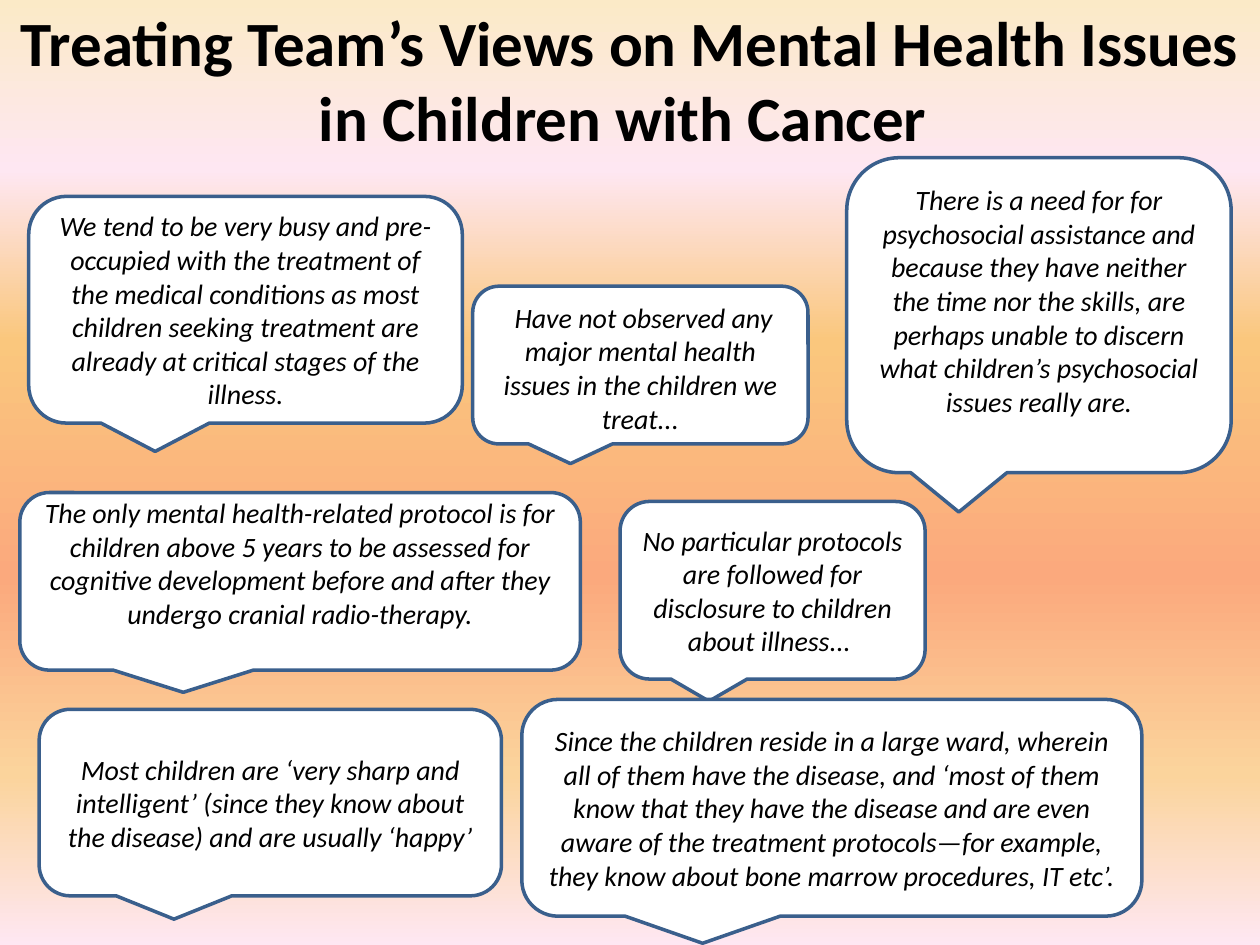
from lxml.etree import SubElement
from pptx import Presentation
from pptx.dml.color import RGBColor
from pptx.enum.shapes import MSO_SHAPE
from pptx.enum.text import MSO_ANCHOR, PP_ALIGN
from pptx.oxml.ns import qn
from pptx.util import Cm, Pt

# Content
TITLE = "Treating Team’s Views on Mental Health Issues in Children with Cancer "
BACKGROUND = [(0, "FBEAC7"), (18, "FEE7F2"), (36, "FAC77D"),
              (61, "FBA97D"), (82, "FBD49C"), (100, "FEE7F2")]
# (left, top, width, height) in cm, upward shift of the text in cm, quote
QUOTES = [
    ((0.58, 3.96, 8.74, 4.57), 0,
     "We tend to be very busy and pre-occupied with the treatment of the medical "
     "conditions as most children seeking treatment are already at critical "
     "stages of the illness."),
    ((9.53, 5.77, 6.76, 3.18), -0.05,
     " Have not observed any major mental health issues in the children we treat..."),
    ((17.07, 3.18, 7.75, 6.35), 0.3,
     "There is a need for for psychosocial assistance and because they have "
     "neither the time nor the skills, are perhaps unable to discern what "
     "children’s psychosocial issues really are."),
    ((0.4, 9.93, 11.3, 3.58), 0.37,
     "The only mental health-related protocol is for children above 5 years to be "
     "assessed for cognitive development before and after they undergo cranial "
     "radio-therapy."),
    ((12.5, 10.11, 6.15, 3.58), 0,
     "No particular protocols are followed for disclosure to children about "
     "illness... "),
    ((10.52, 14.1, 12.5, 4.37), 0,
     "Since the children reside in a large ward, wherein all of them have the "
     "disease, and ‘most of them know that they have the disease and are even "
     "aware of the treatment protocols—for example, they know about bone marrow "
     "procedures, IT etc’."),
    ((0.79, 14.3, 9.32, 3.76), 0,
     "Most children are ‘very sharp and intelligent’ (since they know about the "
     "disease) and are usually ‘happy’"),
]
INSET = 0.13


def color(hex_value):
    return RGBColor.from_string(hex_value)


def write(tf, text, size, bold=False, italic=False):
    tf.text = text
    tf.word_wrap = True
    tf.vertical_anchor = MSO_ANCHOR.MIDDLE
    p = tf.paragraphs[0]
    p.alignment = PP_ALIGN.CENTER
    font = p.runs[0].font
    font.name, font.size = "Calibri", Pt(size)
    font.bold, font.italic = bold, italic
    font.color.rgb = color("000000")


def paint_background(s):
    fill = s.background.fill
    fill.gradient()
    fill.gradient_angle = 270
    stops = s.element.find(".//" + qn("a:gsLst"))
    for stop in list(stops):
        stops.remove(stop)
    for percent, hex_value in BACKGROUND:
        stop = SubElement(stops, qn("a:gs"), pos=str(percent * 1000))
        SubElement(stop, qn("a:srgbClr"), val=hex_value)


def add_quote(s, box, shift, text):
    sp = s.shapes.add_shape(MSO_SHAPE.ROUNDED_RECTANGULAR_CALLOUT, *map(Cm, box))
    sp.shadow.inherit = False
    sp.fill.solid()
    sp.fill.fore_color.rgb = color("FFFFFF")
    sp.line.color.rgb = color("3A5F8C")
    sp.line.width = Pt(2)
    tf = sp.text_frame
    write(tf, text, 16, italic=True)
    # Unequal insets move the centred text up or down
    tf.margin_top = Cm(max(0, INSET - shift))
    tf.margin_bottom = Cm(max(0, INSET - shift) + 2 * shift)


prs = Presentation()
prs.slide_width, prs.slide_height = Cm(25.4), Cm(19.05)
s = prs.slides.add_slide(prs.slide_layouts[5])
paint_background(s)

# Title
title = s.shapes.title
title.left, title.top, title.width, title.height = Cm(0), Cm(0), Cm(25.4), Cm(3.18)
write(title.text_frame, TITLE, 36, bold=True)

# Speech bubbles
for box, shift, text in QUOTES:
    add_quote(s, box, shift, text)

prs.save("out.pptx")
